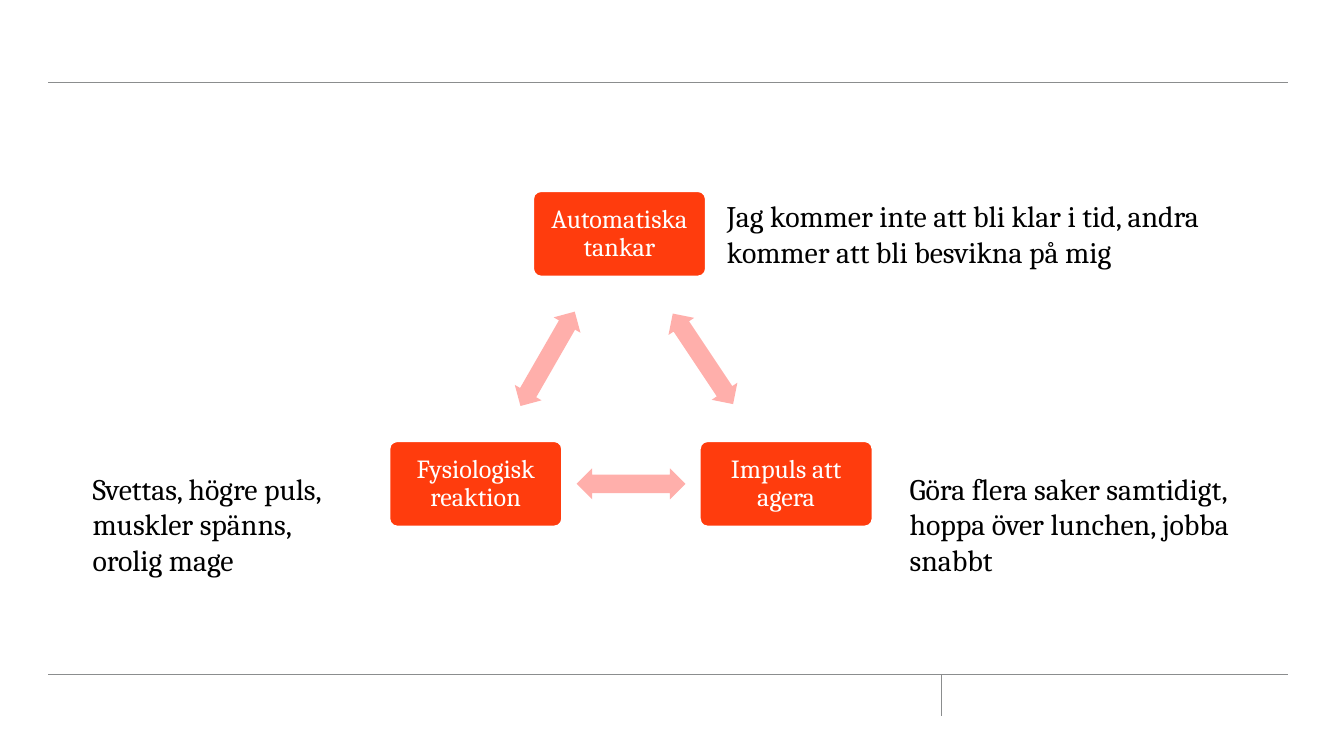
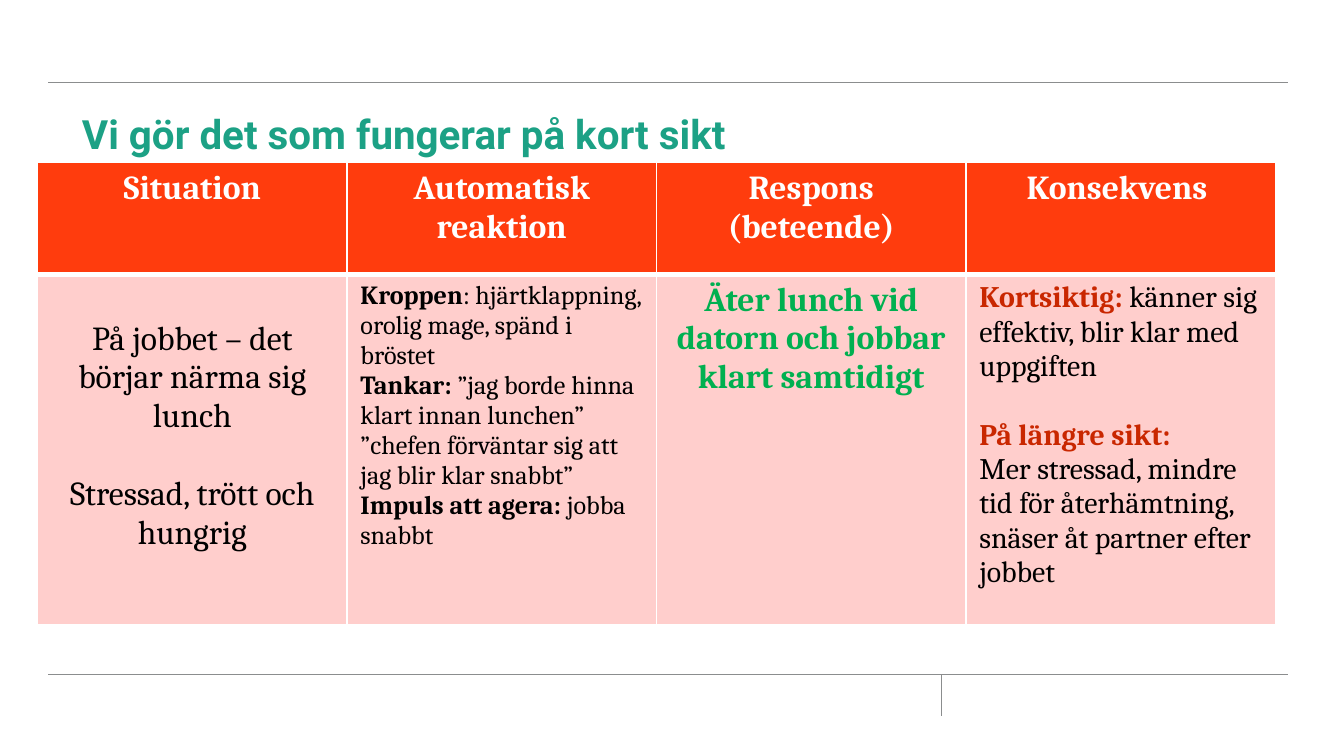
from math import atan2, degrees

from lxml import etree
from pptx import Presentation
from pptx.dml.color import RGBColor
from pptx.enum.shapes import MSO_CONNECTOR, MSO_SHAPE
from pptx.enum.text import MSO_ANCHOR, MSO_AUTO_SIZE, PP_ALIGN
from pptx.oxml.ns import qn
from pptx.util import Inches, Pt

LINE = MSO_CONNECTOR.STRAIGHT
ROUND, ARROW = MSO_SHAPE.ROUNDED_RECTANGLE, MSO_SHAPE.LEFT_RIGHT_ARROW
LEFT, MID = PP_ALIGN.LEFT, PP_ALIGN.CENTER


class Theme:
    serif, sans = "Cambria", "Roboto"
    red, rust, pink, pale = "FF3C0D", "C92700", "FFAFAB", "FFCECC"
    teal, green, grey = "1CA185", "00B050", "8B8D8E"
    white, black = "FFFFFF", "000000"
    title, head, note, small = 21.6, 18, 16, 14


# Content: triangle of nodes (label, centre), notes (text, box)
NODES = [
    ("Automatiska tankar", (4.61, 1.74)),
    ("Impuls att agera", (5.85, 3.6)),
    ("Fysiologisk reaktion", (3.54, 3.6)),
]
NOTES = [
    ("Jag kommer inte att bli klar i tid, andra kommer att bli besvikna på mig",
     (5.31, 1.42, 3.78, 0.91)),
    ("Svettas, högre puls, muskler spänns, orolig mage",
     (0.59, 3.45, 2.18, 0.91)),
    ("Göra flera saker samtidigt, hoppa över lunchen, jobba snabbt",
     (6.67, 3.45, 2.98, 0.91)),
]

# Content: table; each paragraph is a list of (text, bold, colour) runs
TITLE = "Vi gör det som fungerar på kort sikt"
HEADS = ["Situation", "Automatisk reaktion", "Respons (beteende)", "Konsekvens "]
BODY = [
    {"size": Theme.head, "align": MID, "top": 0.34, "gaps": {1: 21}, "paras": [
        [("På jobbet – det börjar närma sig lunch", False, Theme.black)],
        [("Stressad, trött och hungrig", False, Theme.black)]]},
    {"size": Theme.small, "align": LEFT, "paras": [
        [("Kroppen", True, Theme.black),
         (": hjärtklappning, orolig mage, spänd i bröstet", False, Theme.black)],
        [("Tankar: ", True, Theme.black),
         ("”jag borde hinna klart innan lunchen” ”chefen förväntar sig att "
          "jag blir klar snabbt”", False, Theme.black)],
        [("Impuls att agera: ", True, Theme.black),
         ("jobba snabbt", False, Theme.black)]]},
    {"size": Theme.head, "align": MID, "paras": [
        [("Äter lunch vid datorn och jobbar klart samtidigt", True, Theme.green)]]},
    {"size": Theme.note, "align": LEFT, "gaps": {1: 18.5}, "paras": [
        [("Kortsiktig: ", True, Theme.rust),
         ("känner sig effektiv, blir klar med uppgiften", False, Theme.black)],
        [("På längre sikt:", True, Theme.rust)],
        [("Mer stressad, mindre tid för återhämtning, snäser åt partner efter "
          "jobbet", False, Theme.black)]]},
]

# Layout
RULES = [(0.36, 0.61, 9.58, 0.61), (0.36, 5.02, 9.58, 5.02), (7, 5.02, 7, 5.33)]
NODE, SPAN = (1.3, 0.65), (0.81, 0.23)
TABLE, ROWS = (0.28, 1.21, 9.21, 3.44), (0.83, 2.61)


def rgb(code):
    return RGBColor.from_string(code)


def box(nums):
    return [Inches(n) for n in nums]


def style(font, size, color=None, bold=None, name=Theme.serif):
    font.name, font.size, font.bold = name, Pt(size), bold
    if color:
        font.color.rgb = rgb(color)


def write(frame, text, size, color, bold=None, align=LEFT, name=Theme.serif):
    frame.word_wrap = True
    para = frame.paragraphs[0]
    para.text, para.alignment = text, align
    style(para.font, size, color, bold, name)
    return para


def start(deck, layout):
    """Add a slide with the shared thin rules."""
    slide = deck.slides.add_slide(deck.slide_layouts[layout])
    for ends in RULES:
        rule = slide.shapes.add_connector(LINE, *box(ends))
        rule.line.color.rgb = rgb(Theme.grey)
        rule.line.width = Pt(0.25)
        etree.SubElement(rule._element.spPr, qn("a:effectLst"))
    return slide


def block(slide, kind, mid, size, fill, adjs):
    """Add a filled shape centred on a point."""
    (x, y), (w, h) = mid, size
    shape = slide.shapes.add_shape(kind, *box((x - w / 2, y - h / 2, w, h)))
    shape.shadow.inherit = False
    shape.fill.solid()
    shape.fill.fore_color.rgb = rgb(fill)
    shape.line.fill.background()
    for i, val in enumerate(adjs):
        shape.adjustments[i] = val
    return shape


def edge(cell, **widths):
    """White cell borders; widths in points by side, L R T B order."""
    props = cell._tc.get_or_add_tcPr()
    for side in "LRTB":
        line = etree.SubElement(props, qn(f"a:ln{side}"),
                                w=str(Pt(widths.get(side, 1))))
        fill = etree.SubElement(line, qn("a:solidFill"))
        etree.SubElement(fill, qn("a:srgbClr"), val=Theme.white)


def paint(cell, color):
    cell.fill.solid()
    cell.fill.fore_color.rgb = rgb(color)


def fill_cell(cell, part):
    """Write paragraphs of mixed runs into a body cell."""
    cell.margin_top = Inches(part.get("top", 0.05))
    frame = cell.text_frame
    for i, runs in enumerate(part["paras"]):
        para = frame.add_paragraph() if i else frame.paragraphs[0]
        para.alignment = part["align"]
        if i in part.get("gaps", {}):
            para.space_before = Pt(part["gaps"][i])
        style(para.font, part["size"])
        for text, bold, color in runs:
            run = para.add_run()
            run.text, run.font.bold = text, bold
            run.font.color.rgb = rgb(color)


def draw_cycle(deck):
    slide = start(deck, 6)
    # Nodes
    for label, mid in NODES:
        node = block(slide, ROUND, mid, NODE, Theme.red, [0.1])
        node.line.color.rgb = rgb(Theme.white)
        node.line.width = Pt(2)
        frame = node.text_frame
        frame.margin_left = frame.margin_right = Inches(0.08)
        frame.margin_top = frame.margin_bottom = Inches(0.08)
        frame.vertical_anchor = MSO_ANCHOR.MIDDLE
        para = write(frame, label, Theme.small, Theme.white, align=MID)
        para.line_spacing = 0.9
    # Arrows halfway between neighbours
    mids = [mid for _, mid in NODES]
    for (x1, y1), (x2, y2) in zip(mids, mids[1:] + mids[:1]):
        arrow = block(slide, ARROW, ((x1 + x2) / 2, (y1 + y2) / 2), SPAN,
                      Theme.pink, [0.6, 0.5])
        arrow.rotation = degrees(atan2(y2 - y1, x2 - x1)) % 360
    # Notes
    for text, place in NOTES:
        note = slide.shapes.add_textbox(*box(place))
        write(note.text_frame, text, Theme.note, Theme.black)


def draw_table(deck):
    slide = start(deck, 5)
    # Title
    title = slide.shapes.title
    title.left, title.top, title.width, title.height = box((0.51, 0.69, 5.91, 0.53))
    frame = title.text_frame
    frame.auto_size = MSO_AUTO_SIZE.NONE
    frame.vertical_anchor = MSO_ANCHOR.BOTTOM
    write(frame, TITLE, Theme.title, Theme.teal, True, name=Theme.sans)
    # Table
    grid = slide.shapes.add_table(2, len(HEADS), *box(TABLE)).table
    for row, high in zip(grid.rows, ROWS):
        row.height = Inches(high)
    for col, (head, part) in enumerate(zip(HEADS, BODY)):
        top, low = grid.cell(0, col), grid.cell(1, col)
        edge(top, B=3)
        edge(low, T=3)
        paint(top, Theme.red)
        paint(low, Theme.pale)
        write(top.text_frame, head, Theme.head, Theme.white, True, MID)
        fill_cell(low, part)


def main():
    deck = Presentation()
    # Widescreen, 16:9
    deck.slide_width = Inches(10)
    deck.slide_height = Inches(10 * 9 / 16)
    draw_cycle(deck)
    draw_table(deck)
    deck.save("out.pptx")


if __name__ == "__main__":
    main()
